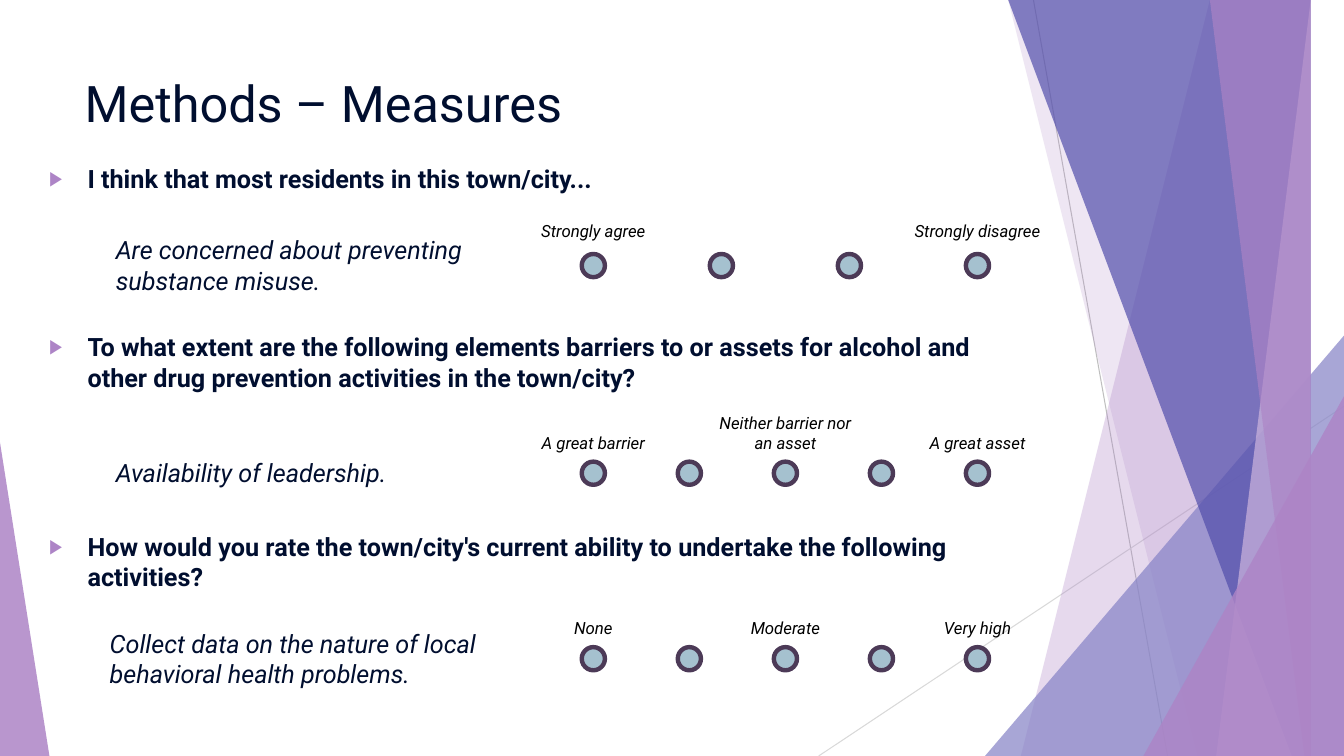
from dataclasses import dataclass

import pptx
import pptx.dml.color
import pptx.enum.shapes
import pptx.enum.text
import pptx.oxml
import pptx.oxml.ns
import pptx.util
from lxml import etree

Inches = pptx.util.Inches
Shape = pptx.enum.shapes.MSO_SHAPE
Align = pptx.enum.text.PP_ALIGN
Anchor = pptx.enum.text.MSO_ANCHOR
qn = pptx.oxml.ns.qn

WIDTH, HEIGHT = 13.33, 7.5


@dataclass(frozen=True)
class Theme:
    font: str = "Roboto"
    ink: str = "000E2F"
    label: str = "000000"
    lilac: str = "AD84C6"
    pale_lilac: str = "CEB5DD"
    periwinkle: str = "8784C7"
    indigo: str = "524EAB"
    dot: str = "A5C1CF"
    dot_edge: str = "4C3A57"
    dark_rule: str = "BFBFBF"
    light_rule: str = "D9D9D9"
    title_size: int = 36
    body_size: int = 18
    label_size: int = 12


THEME = Theme()

# question, its box, statement, its box, labels by dot, dot top, gap over dots
MEASURES = [
    ("I think that most residents in this town/city...", (0.39, 1.57, 9.4, 0.46),
     "Are concerned about preventing substance misuse.", (1.05, 2.28, 3.92, 0.71),
     ["Strongly agree", "", "", "Strongly disagree"], 2.52, 0.08),
    ("To what extent are the following elements barriers to or assets for alcohol "
     "and other drug prevention activities in the town/city?", (0.39, 3.24, 9.4, 1.02),
     "Availability of leadership.", (1.05, 4.49, 3.16, 0.4),
     ["A great barrier", "", "Neither barrier nor an asset", "", "A great asset"], 4.58, 0.04),
    ("How would you rate the town/city's current ability to undertake the following "
     "activities?", (0.39, 5.22, 9.4, 0.71),
     "Collect data on the nature of local behavioral health problems.",
     (0.99, 6.18, 4.04, 0.71),
     ["None", "", "Moderate", "", "Very high"], 6.42, 0.04),
]


def rgb(color):
    return pptx.dml.color.RGBColor.from_string(color)


def write(frame, text, size=THEME.body_size, color=THEME.ink, bold=False, italic=False,
          align=Align.LEFT, anchor=Anchor.TOP):
    frame.word_wrap = True
    frame.auto_size = pptx.enum.text.MSO_AUTO_SIZE.NONE
    frame.vertical_anchor = anchor
    paragraph = frame.paragraphs[0]
    paragraph.alignment = align
    run = paragraph.add_run()
    run.text = text
    run.font.name = THEME.font
    run.font.size = pptx.util.Pt(size)
    run.font.color.rgb = rgb(color)
    run.font.bold = bold
    run.font.italic = italic
    return paragraph


def add_text(slide, box, text, **text_format):
    frame = slide.shapes.add_textbox(*map(Inches, box)).text_frame
    return write(frame, text, **text_format)


def add_bullet(paragraph):
    paragraph.space_before = pptx.util.Pt(10)
    properties = paragraph._p.get_or_add_pPr()
    properties.set("marL", str(Inches(0.38)))
    properties.set("indent", str(-Inches(0.38)))
    color = etree.SubElement(properties, qn("a:buClr"))
    etree.SubElement(color, qn("a:srgbClr"), val=THEME.lilac)
    etree.SubElement(properties, qn("a:buSzPct"), val="80000")
    etree.SubElement(properties, qn("a:buFont"), typeface="Arial")
    etree.SubElement(properties, qn("a:buChar"), char="▶")


def paint_facet(facet, color, opacity):
    facet.shadow.inherit = False
    facet.line.fill.background()
    facet.fill.solid()
    facet.fill.fore_color.rgb = rgb(color)
    fill_color = facet.fill._xPr.find(qn("a:solidFill"))[0]
    etree.SubElement(fill_color, qn("a:alpha"), val=str(opacity * 1000))


def add_rule(slide, start, end, color):
    rule = slide.shapes.add_connector(
        pptx.enum.shapes.MSO_CONNECTOR.STRAIGHT, *map(Inches, start + end))
    rule.line.color.rgb = rgb(color)
    rule.line.width = pptx.util.Pt(0.75)
    etree.SubElement(rule._element.spPr, qn("a:effectLst"))


def add_band(slide, top_x, bottom_x, color, opacity):
    """Fill from a slanted left edge to the right edge of the slide."""
    builder = slide.shapes.build_freeform(top_x, 0, scale=Inches(1))
    builder.add_line_segments([(WIDTH, 0), (WIDTH, HEIGHT), (bottom_x, HEIGHT)])
    paint_facet(builder.convert_to_shape(), color, opacity)


def add_corner(slide, box, apex, color, opacity):
    corner = slide.shapes.add_shape(Shape.ISOSCELES_TRIANGLE, *map(Inches, box))
    corner.adjustments[0] = apex
    paint_facet(corner, color, opacity)


def add_backdrop(slide):
    add_rule(slide, (10.25, 0), (11.58, HEIGHT), THEME.dark_rule)
    add_rule(slide, (WIDTH, 4.03), (8.12, HEIGHT), THEME.light_rule)
    add_band(slide, 12.28, 10.04, THEME.lilac, 30)
    add_band(slide, 10.5, 11.83, THEME.lilac, 20)
    add_corner(slide, (9.77, 3.33, 3.56, 4.17), 1, THEME.periwinkle, 72)
    add_band(slide, 10.21, 12.91, THEME.indigo, 70)
    add_band(slide, 13.03, 11.92, THEME.pale_lilac, 70)
    add_band(slide, 11.96, 13.18, THEME.lilac, 65)
    add_corner(slide, (11.34, 3.93, 1.99, 3.57), 1, THEME.lilac, 80)
    add_corner(slide, (0, 4.39, 0.49, 3.11), 0, THEME.lilac, 85)


def add_scale(slide, box, labels, label_gap):
    """Spread dots evenly over the box, with labels centred above them."""
    left, top, width, dot_size = box
    label_width, label_height = 1.55, 0.5
    step = (width - dot_size) / (len(labels) - 1)
    for index, label in enumerate(labels):
        dot_left = left + index * step
        dot = slide.shapes.add_shape(
            Shape.OVAL, *map(Inches, (dot_left, top, dot_size, dot_size)))
        dot.shadow.inherit = False
        dot.fill.solid()
        dot.fill.fore_color.rgb = rgb(THEME.dot)
        dot.line.color.rgb = rgb(THEME.dot_edge)
        dot.line.width = pptx.util.Pt(3.15)
        if label:
            label_box = (dot_left + (dot_size - label_width) / 2,
                         top - label_gap - label_height, label_width, label_height)
            add_text(slide, label_box, label, size=THEME.label_size, color=THEME.label,
                     italic=True, align=Align.CENTER, anchor=Anchor.BOTTOM)


def add_measure(slide, question, question_box, statement, statement_box,
                labels, dot_top, label_gap):
    add_bullet(add_text(slide, question_box, question, bold=True))
    add_text(slide, statement_box, statement, italic=True)
    add_scale(slide, (5.77, dot_top, 4.04, 0.23), labels, label_gap)


def add_title(slide, box, text):
    title = slide.shapes.title
    title.left, title.top, title.width, title.height = map(Inches, box)
    write(title.text_frame, text, size=THEME.title_size)


def main():
    deck = pptx.Presentation()
    deck.slide_width, deck.slide_height = Inches(WIDTH), Inches(HEIGHT)
    slide = deck.slides.add_slide(deck.slide_layouts.get_by_name("Title Only"))
    add_backdrop(slide)
    add_title(slide, (0.74, 0.67, 9.4, 1.06), "Methods – Measures")
    for measure in MEASURES:
        add_measure(slide, *measure)
    deck.save("out.pptx")


if __name__ == "__main__":
    main()
